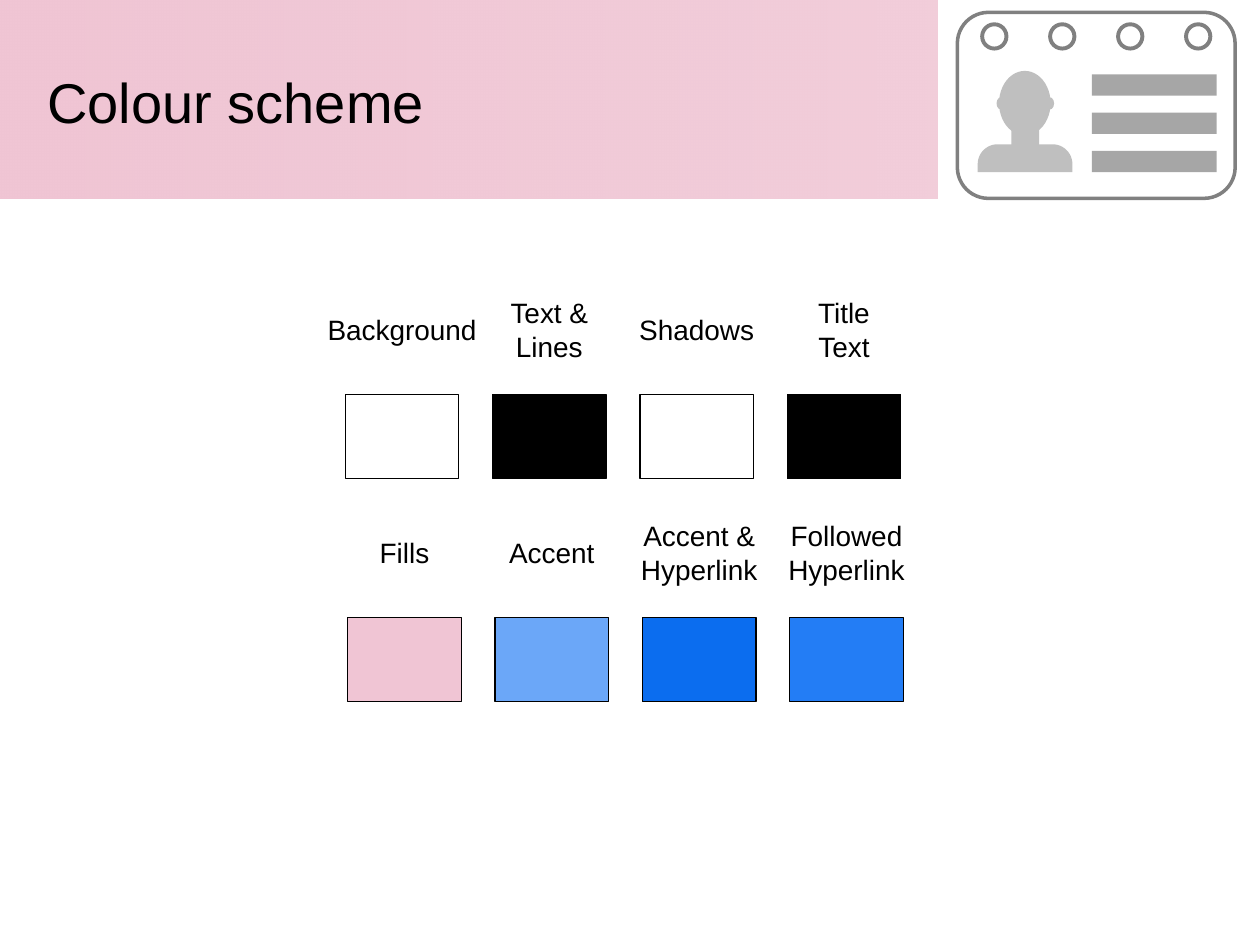
from math import cos, pi, sin

from lxml.etree import SubElement
from pptx import Presentation
from pptx.dml.color import RGBColor
from pptx.enum.shapes import MSO_SHAPE as Shape
from pptx.enum.text import MSO_ANCHOR as Anchor, MSO_AUTO_SIZE as AutoSize, PP_ALIGN as Align
from pptx.oxml.ns import qn
from pptx.util import Cm, Pt

BLACK = RGBColor(0x00, 0x00, 0x00)
WHITE = RGBColor(0xFF, 0xFF, 0xFF)
PINK = RGBColor(0xF0, 0xC5, 0xD4)
LIGHT_BLUE = RGBColor(0x6B, 0xA7, 0xF8)
LINK_BLUE = RGBColor(0x0B, 0x6D, 0xEF)
FOLLOWED_BLUE = RGBColor(0x23, 0x7D, 0xF5)
OUTLINE_GREY = RGBColor(0x80, 0x80, 0x80)
PERSON_GREY = RGBColor(0xBF, 0xBF, 0xBF)
BAR_GREY = RGBColor(0xA6, 0xA6, 0xA6)

FONT = "Arial"
TITLE = "Colour scheme"

SCHEME = [
    (6.96, 7.95, [("Background", 3.53, WHITE), ("Text &\nLines", 2.2, BLACK),
                  ("Shadows", 2.9, WHITE), ("Title\vText", 1.65, BLACK)]),
    (7.01, 12.45, [("Fills", 1.55, PINK), ("Accent", 2.3, LIGHT_BLUE),
                   ("Accent &\nHyperlink", 2.95, LINK_BLUE),
                   ("Followed\nHyperlink", 2.95, FOLLOWED_BLUE)]),
]
SWATCH_WIDTH, SWATCH_HEIGHT, SWATCH_PITCH = 2.29, 1.7, 2.97
LABEL_RISE = 1.3
LABEL_HEIGHTS = {1: 0.94, 2: 1.63}

HOLE_COUNT, HOLE_PITCH = 4, 1.37
BAR_COUNT, BAR_PITCH = 3, 0.77
PERSON_PARTS = [
    (Shape.OVAL, 20.14, 1.43, 1.04, 1.3),
    (Shape.ROUNDED_RECTANGLE, 20.39, 2.24, 0.56, 0.91),
    (Shape.OVAL, 20.09, 1.96, 0.18, 0.25),
    (Shape.OVAL, 21.07, 1.96, 0.18, 0.25),
]
SHOULDERS = (19.71, 2.91, 1.91, 0.56)
SHOULDER_RADIUS, ARC_STEPS = 0.4, 12


def paint(shape, fill=None, line=None, weight=0.75):
    shape.shadow.inherit = False
    if fill is None:
        shape.fill.background()
    else:
        shape.fill.solid()
        shape.fill.fore_color.rgb = fill
    if line is None:
        shape.line.fill.background()
    else:
        shape.line.color.rgb = line
        shape.line.width = Pt(weight)


def add_part(shapes, preset, left, top, width, height, **colours):
    part = shapes.add_shape(preset, Cm(left), Cm(top), Cm(width), Cm(height))
    paint(part, **colours)
    return part


def format_text(frame, size, align):
    for paragraph in frame.paragraphs:
        paragraph.alignment = align
        paragraph.font.name = FONT
        paragraph.font.size = Pt(size)
        paragraph.font.color.rgb = BLACK


def add_band(shapes):
    band = add_part(shapes, Shape.RECTANGLE, 0, 0, 18.9, 4)
    band.fill.gradient()
    band.fill.gradient_angle = 0
    for stop in band.fill.gradient_stops:
        stop.color.rgb = PINK
    fading = list(band._element.iter(qn("a:srgbClr")))[-1]
    SubElement(fading, qn("a:alpha"), val="85000")


def add_shoulders(shapes):
    left, top, width, height = SHOULDERS
    radius, bottom = SHOULDER_RADIUS, top + height
    angles = [pi / 2 * step / ARC_STEPS for step in range(ARC_STEPS + 1)]
    left_arc = [(left + radius * (1 - cos(a)), top + radius * (1 - sin(a))) for a in angles]
    right_arc = [(2 * left + width - x, y) for x, y in reversed(left_arc)]
    outline = left_arc + right_arc + [(left + width, bottom), (left, bottom)]
    points = [(Cm(x), Cm(y)) for x, y in outline]
    builder = shapes.build_freeform(*points[0])
    builder.add_line_segments(points[1:], close=True)
    paint(builder.convert_to_shape(), fill=PERSON_GREY)


def add_badge(shapes):
    badge = shapes.add_group_shape().shapes
    add_part(badge, Shape.ROUNDED_RECTANGLE, 19.3, 0.25, 5.6, 3.75,
             line=OUTLINE_GREY, weight=2)
    for hole in range(HOLE_COUNT):
        add_part(badge, Shape.OVAL, 19.8 + hole * HOLE_PITCH, 0.49, 0.49, 0.49,
                 line=OUTLINE_GREY, weight=2.25)
    for bar in range(BAR_COUNT):
        add_part(badge, Shape.RECTANGLE, 22.01, 1.5 + bar * BAR_PITCH, 2.52, 0.43, fill=BAR_GREY)
    add_shoulders(badge)
    for preset, *box in PERSON_PARTS:
        add_part(badge, preset, *box, fill=PERSON_GREY)


def place_title(slide):
    title = slide.shapes.title
    slide.shapes._spTree.append(title._element)
    title.left, title.top, title.width, title.height = Cm(0.7), Cm(0.76), Cm(19), Cm(2.57)
    frame = title.text_frame
    frame.text = TITLE
    frame.auto_size = AutoSize.NONE
    frame.vertical_anchor = Anchor.MIDDLE
    format_text(frame, 32, Align.LEFT)


def add_label(shapes, label, width, centre_x, centre_y):
    height = LABEL_HEIGHTS[len(label.splitlines())]
    box = shapes.add_textbox(Cm(centre_x - width / 2), Cm(centre_y - height / 2),
                             Cm(width), Cm(height))
    frame = box.text_frame
    frame.text = label
    frame.word_wrap = False
    frame.auto_size = AutoSize.SHAPE_TO_FIT_TEXT
    format_text(frame, 16, Align.CENTER)


def add_scheme(shapes):
    for row_left, top, swatches in SCHEME:
        for column, (label, label_width, colour) in enumerate(swatches):
            left = row_left + column * SWATCH_PITCH
            add_part(shapes, Shape.RECTANGLE, left, top, SWATCH_WIDTH, SWATCH_HEIGHT,
                     fill=colour, line=BLACK)
            add_label(shapes, label, label_width, left + SWATCH_WIDTH / 2, top - LABEL_RISE)


def main():
    deck = Presentation()
    deck.slide_width, deck.slide_height = Cm(25.4), Cm(19.05)
    slide = deck.slides.add_slide(deck.slide_layouts[5])
    add_band(slide.shapes)
    add_badge(slide.shapes)
    place_title(slide)
    add_scheme(slide.shapes)
    deck.save("out.pptx")


if __name__ == "__main__":
    main()
